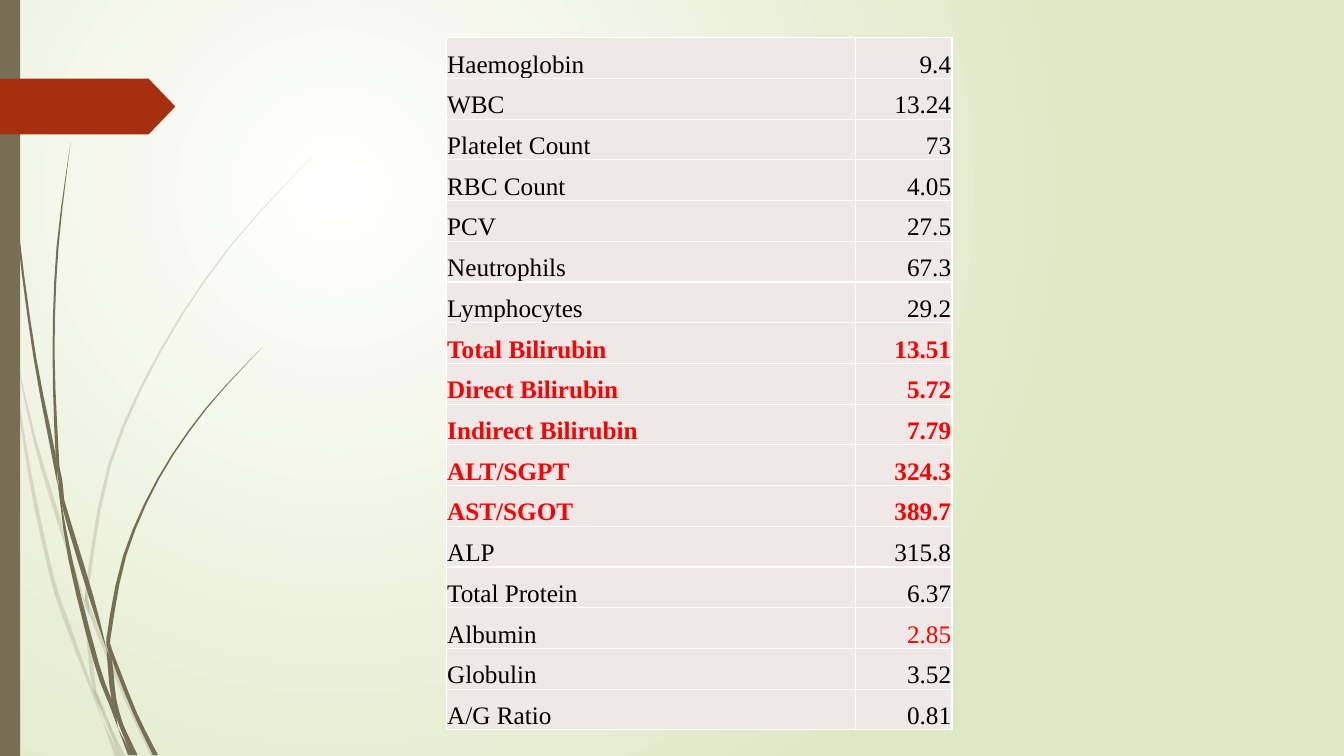
"""Build a slide with a table of blood test results."""
from dataclasses import dataclass

from lxml.etree import SubElement as Sub
from pptx import Presentation
from pptx.dml.color import RGBColor as Rgb
from pptx.enum.shapes import MSO_SHAPE as Form
from pptx.enum.text import MSO_ANCHOR as Anchor, PP_ALIGN as Align
from pptx.oxml.ns import qn
from pptx.util import Cm, Pt


@dataclass(frozen=True)
class Theme:
    """Colours and type of the slide."""
    olive: Rgb = Rgb.from_string("766F54")
    rust: Rgb = Rgb.from_string("A53010")
    white: Rgb = Rgb.from_string("FFFFFF")
    lime: Rgb = Rgb.from_string("DFE8C4")
    cell: Rgb = Rgb.from_string("F0E8E7")
    black: Rgb = Rgb.from_string("000000")
    red: Rgb = Rgb.from_string("FF0000")
    font: str = "Times New Roman"
    size: Pt = Pt(18)


THEME = Theme()
WIDE, HIGH = 33.87, 19.05

TESTS = [
    ("Haemoglobin", "9.4"), ("WBC", "13.24"), ("Platelet Count", "73"),
    ("RBC Count", "4.05"), ("PCV", "27.5"), ("Neutrophils", "67.3"),
    ("Lymphocytes", "29.2"), ("Total Bilirubin", "13.51"),
    ("Direct Bilirubin", "5.72"), ("Indirect Bilirubin", "7.79"),
    ("ALT/SGPT", "324.3"), ("AST/SGOT", "389.7"), ("ALP", "315.8"),
    ("Total Protein", "6.37"), ("Albumin", "2.85"), ("Globulin", "3.52"),
    ("A/G Ratio", "0.81"),
]
ALERTS = {"Total Bilirubin", "Direct Bilirubin", "Indirect Bilirubin",
          "ALT/SGPT", "AST/SGOT"}
RED = ALERTS | {"2.85"}

PALE = [
    [(0, 7.16, 0), (.13, 8, .1), (.28, 8.89, 0)],
    [(.36, 8.76, 0), (.88, 11.1, .08), (1.52, 13.23, .11), (2.14, 15.21, .02)],
    [(2.24, 15.14, 0), (2.29, 15.46, .1), (3.18, 17.6, .11),
     (3.87, 19.05, .13)],
    [(2.67, 18.06, 0), (3.09, 19.05, .13)],
    [(.28, 8.89, 0), (.75, 11.94, .09), (1.3, 14.5, .1),
     (1.71, 15.75, .12), (2.35, 17.48, .06), (2.57, 18.14, 0)],
    [(2.13, 15.21, 0), (2.26, 16.41, .1), (2.4, 17.45, .08), (2.67, 18.06, 0)],
    [(7.92, 3.89, 0), (5.8, 6.21, .04), (4.04, 8.85, .06),
     (2.76, 11.72, .08), (2.2, 14.83, .08), (2.24, 15.14, 0)],
    [(2.57, 18.14, 0), (2.96, 19.05, .13)],
    [(2.16, 14.88, 0), (2.18, 15.2, .1), (2.24, 15.49, 0)],
    [(2.36, 17.35, 0), (2.55, 17.8, .11), (3.02, 19.05, 0)],
]
DARK = [
    [(.09, 0, .03), (.19, 2.79, .03), (.46, 5.92, .05), (.88, 9.02, .07),
     (1.34, 11.4, .1), (1.45, 12.22, 0)],
    [(1.52, 11.99, 0), (1.57, 12.6, .1), (2.29, 15.01, .12), (2.69, 16.38, 0)],
    [(2.79, 16.28, 0), (2.85, 16.57, .1), (3.4, 17.96, .1),
     (3.92, 19.03, .13)],
    [(1.45, 12.12, 0), (1.78, 14.13, .1), (2.43, 16.71, .12),
     (2.81, 17.77, .1), (2.97, 18.34, 0)],
    [(1.78, 3.58, 0), (1.45, 6.22, .05), (1.35, 8.86, .05),
     (1.44, 11.43, .08), (1.52, 11.99, 0)],
    [(3.1, 18.26, 0), (3.42, 19.03, .1)],
    [(1.4, 11.4, 0), (1.52, 12.1, .1), (1.63, 12.83, 0)],
    [(6.62, 8.74, 0), (5.19, 10.3, .04), (3.99, 12.06, .05),
     (3.14, 14.01, .08), (2.74, 16.05, .1), (2.79, 16.28, 0)],
    [(2.97, 18.34, 0), (3.28, 19.03, .1)],
    [(2.69, 16.38, 0), (2.77, 16.7, .12), (2.87, 17.6, .12), (3.1, 18.26, 0)],
    [(2.69, 16.03, 0), (2.75, 16.3, .11), (2.82, 16.66, 0)],
    [(2.79, 17.55, 0), (2.95, 18, .11), (3.36, 19.03, .1)],
]


def paint(shape, color):
    """Give a shape a flat fill without line or shadow."""
    shape.shadow.inherit = False
    shape.fill.solid()
    shape.fill.fore_color.rgb = color
    shape.line.fill.background()


def smooth(knots, steps=3):
    """Return points on a smooth curve through the knots."""
    ends = [knots[0], *knots, knots[-1]]
    curve = []
    for a, b, c, d in zip(ends, ends[1:], ends[2:], ends[3:]):
        for n in range(steps):
            t = n / steps
            curve.append(tuple(
                q + t * (r - p + t * (2 * p - 5 * q + 4 * r - s
                                      + t * (3 * q - p - 3 * r + s))) / 2
                for p, q, r, s in zip(a, b, c, d)))
    return curve + [knots[-1]]


def blade(slide, left, top, knots, alpha):
    """Draw one piece of grass from knots of x, y and width."""
    curve = smooth(knots)
    edge = [(x - w / 2, y) for x, y, w in curve]
    edge += [(x + w / 2, y) for x, y, w in reversed(curve)]
    edge = [(Cm(left + x), Cm(top + y)) for x, y in edge]
    form = slide.shapes.build_freeform(*edge[0])
    form.add_line_segments(edge[1:], close=True)
    shape = form.convert_to_shape()
    paint(shape, THEME.olive)
    if alpha < 100:
        tint = shape.element.spPr.find(f"{qn('a:solidFill')}/{qn('a:srgbClr')}")
        Sub(tint, qn("a:alpha"), val=str(alpha * 1000))


def glow(slide):
    """Fill the background with a round gradient."""
    fill = slide.background.fill
    fill.gradient()
    for stop, color, place in zip(fill.gradient_stops,
                                  (THEME.white, THEME.lime), (0, 1)):
        stop.color.rgb, stop.position = color, place
    grad = slide.element.find(f".//{qn('a:gradFill')}")
    grad.remove(grad.find(qn("a:lin")))
    ring = Sub(grad, qn("a:path"), path="circle")
    Sub(ring, qn("a:fillToRect"), l="50000", t="50000", r="100000", b="100000")


def decor(slide, left, top, high):
    """Draw the grass, the side bar and the arrow tag."""
    for group, alpha in ((PALE, 20), (DARK, 100)):
        for knots in group:
            blade(slide, left, top, knots, alpha)
    bar = slide.shapes.add_shape(Form.RECTANGLE, Cm(left), Cm(top),
                                 Cm(.51), Cm(high))
    paint(bar, THEME.olive)
    tag = slide.shapes.add_shape(Form.PENTAGON, Cm(left), Cm(top + 1.98),
                                 Cm(4.42), Cm(1.41))
    tag.adjustments[0] = .48
    paint(tag, THEME.rust)


def write(cell, text, bold, align):
    """Format one table cell and set its text."""
    cell.fill.solid()
    cell.fill.fore_color.rgb = THEME.cell
    cell.vertical_anchor = Anchor.BOTTOM
    cell.margin_left = cell.margin_right = cell.margin_top = Cm(.02)
    cell.margin_bottom = 0
    para = cell.text_frame.paragraphs[0]
    para.alignment = align
    run = para.add_run()
    run.text = text
    font = run.font
    font.name, font.size, font.bold = THEME.font, THEME.size, bold
    font.color.rgb = THEME.red if bold or text in RED else THEME.black


def results(slide, left, top, wide, high):
    """Place the table of test results in the given box."""
    table = slide.shapes.add_table(len(TESTS), 2, Cm(left), Cm(top),
                                   Cm(wide), Cm(high)).table
    table.first_row = table.horz_banding = False
    for col, share in zip(table.columns, (.81, .19)):
        col.width = Cm(wide * share)
    for row, pair in zip(table.rows, TESTS):
        bold = pair[0] in ALERTS
        for cell, text, align in zip(row.cells, pair,
                                     (Align.LEFT, Align.RIGHT)):
            write(cell, text, bold, align)


def main():
    """Build and save the presentation."""
    deck = Presentation()
    deck.slide_width, deck.slide_height = Cm(WIDE), Cm(HIGH)
    slide = deck.slides.add_slide(deck.slide_layouts[6])
    glow(slide)
    decor(slide, 0, 0, HIGH)
    results(slide, 11.25, .95, 12.74, 17.45)
    deck.save("out.pptx")


if __name__ == "__main__":
    main()
